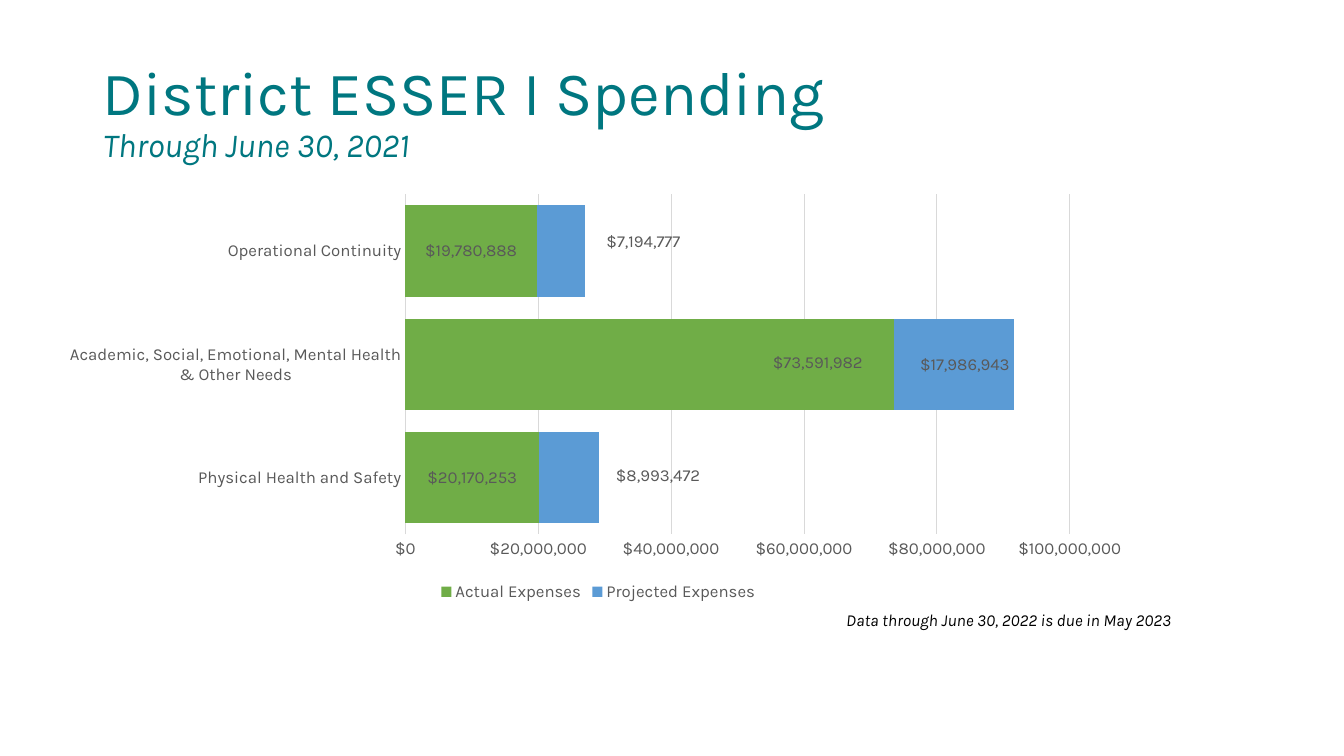
from lxml import etree
from pptx import Presentation
from pptx.chart.data import CategoryChartData
from pptx.dml.color import RGBColor
from pptx.enum.chart import XL_CHART_TYPE as ChartType
from pptx.enum.chart import XL_LABEL_POSITION as LabelPosition
from pptx.enum.chart import XL_LEGEND_POSITION as LegendPosition
from pptx.enum.chart import XL_TICK_MARK as TickMark
from pptx.enum.text import MSO_ANCHOR as Anchor
from pptx.enum.text import MSO_AUTO_SIZE as AutoSize
from pptx.enum.text import PP_ALIGN as Align
from pptx.oxml import parse_xml
from pptx.oxml.ns import nsdecls, qn
from pptx.util import Inches, Pt

TEAL = RGBColor(0x00, 0x77, 0x80)
BLACK = RGBColor(0x00, 0x00, 0x00)
GRAY = RGBColor(0x59, 0x59, 0x59)
GRID = RGBColor(0xD9, 0xD9, 0xD9)
GREEN = RGBColor(0x70, 0xAD, 0x47)
BLUE = RGBColor(0x5B, 0x9B, 0xD5)

FONT = "Karla"
DOLLARS = '"$"#,##0'
PLOT_AREA = {"x": 0.322, "y": 0.042, "w": 0.613, "h": 0.792}
NO_LEADER_LINES = (
    f"<c:extLst {nsdecls('c')}>"
    '<c:ext uri="{CE6537A1-D6FC-4f65-9D91-7224C49458BB}"'
    ' xmlns:c15="http://schemas.microsoft.com/office/drawing/2012/chart">'
    '<c15:showLeaderLines val="0"/></c:ext></c:extLst>'
)

CATEGORIES = [
    "Physical Health and Safety",
    "Academic, Social, Emotional, Mental Health & Other Needs",
    "Operational Continuity",
]
# Name, amounts, colour, label position, label shifts by category index
EXPENSES = [
    ("Actual Expenses", (20170253, 73591982, 19780888), GREEN,
     LabelPosition.CENTER, {1: (0.155, -0.005)}),
    ("Projected Expenses", (8993472, 17986943, 7194777), BLUE,
     LabelPosition.INSIDE_END, {0: (0.097, -0.005), 2: (0.092, -0.021)}),
]


def style_font(font, size, color):
    font.name = FONT
    font.size = Pt(size)
    font.color.rgb = color


def place(shape, left, top, width, height):
    shape.left, shape.top = Inches(left), Inches(top)
    shape.width, shape.height = Inches(width), Inches(height)


def add_heading(slide, box):
    title = slide.shapes.title
    place(title, *box)
    frame = title.text_frame
    frame.auto_size = AutoSize.NONE
    frame.vertical_anchor = Anchor.MIDDLE
    heading = frame.paragraphs[0]
    heading.alignment = Align.LEFT
    heading.line_spacing = 0.9
    name = heading.add_run()
    name.text = "District ESSER I Spending"
    heading.add_line_break()
    period = heading.add_run()
    period.text = "Through June 30, 2021"
    for run, size in ((name, 44), (period, 24)):
        style_font(run.font, size, TEAL)
    period.font.italic = True


def manual_layout(values, inner=False):
    """Return a c:layout element; inner marks the plot area without its labels."""
    layout = parse_xml(f"<c:layout {nsdecls('c')}><c:manualLayout/></c:layout>")
    settings = dict(values)
    if inner:
        settings = {"layoutTarget": "inner", "xMode": "edge", "yMode": "edge", **settings}
    for tag, value in settings.items():
        etree.SubElement(layout[0], qn(f"c:{tag}")).set("val", str(value))
    return layout


def shift_label(series, index, position, shift):
    """Move one value label by fractions of the chart's width and height."""
    label = series.points[index].data_label
    label.position = position
    style_font(label.font, 12, GRAY)
    number_format = parse_xml(f"<c:numFmt {nsdecls('c')} sourceLinked='0'/>")
    number_format.set("formatCode", DOLLARS)
    for label_index in series.data_labels._element.iterfind(f"{qn('c:dLbl')}/{qn('c:idx')}"):
        if label_index.get("val") == str(index):
            label_index.addnext(number_format)
            label_index.addnext(manual_layout(dict(zip("xy", shift))))


def hide_leader_lines(labels):
    element = labels._element
    for setting in element.findall(qn("c:showLeaderLines")):
        setting.set("val", "0")
    element.append(parse_xml(NO_LEADER_LINES))


def style_series(series, color, position, shifts):
    series.format.fill.solid()
    series.format.fill.fore_color.rgb = color
    labels = series.data_labels
    labels.show_value = True
    labels.number_format = DOLLARS
    labels.number_format_is_linked = False
    labels.position = position
    style_font(labels.font, 12, GRAY)
    for index, shift in shifts.items():
        shift_label(series, index, position, shift)
    hide_leader_lines(labels)


def style_axes(chart):
    for axis in (chart.category_axis, chart.value_axis):
        axis.major_tick_mark = axis.minor_tick_mark = TickMark.NONE
        style_font(axis.tick_labels.font, 12, GRAY)
    amounts = chart.value_axis
    amounts.minimum_scale, amounts.maximum_scale = 0, 100_000_000
    amounts.major_unit = 20_000_000
    amounts.tick_labels.number_format = DOLLARS
    amounts.tick_labels.number_format_is_linked = False
    amounts.format.line.fill.background()
    amounts.has_major_gridlines = True
    for line in (chart.category_axis.format.line, amounts.major_gridlines.format.line):
        line.color.rgb = GRID
        line.width = Pt(0.75)


def add_spending_chart(slide, box):
    data = CategoryChartData(number_format=DOLLARS)
    data.categories = CATEGORIES
    for name, amounts, *_ in EXPENSES:
        data.add_series(name, amounts)
    chart = slide.shapes.add_chart(
        ChartType.BAR_STACKED, *map(Inches, box), data).chart
    style_font(chart.font, 10, BLACK)
    chart.has_title = False
    chart.has_legend = True
    chart.legend.position = LegendPosition.BOTTOM
    chart.legend.include_in_layout = False
    style_font(chart.legend.font, 12, GRAY)
    style_axes(chart)

    bars = chart.plots[0]
    bars.gap_width, bars.overlap = 24, 100
    bars.vary_by_categories = False
    for series, (_, _, color, position, shifts) in zip(bars.series, EXPENSES):
        style_series(series, color, position, shifts)

    plot_area = chart._chartSpace.chart.plotArea
    for layout in plot_area.findall(qn("c:layout")):
        plot_area.remove(layout)
    plot_area.insert(0, manual_layout(PLOT_AREA, inner=True))


def add_data_note(slide, box):
    frame = slide.shapes.add_textbox(*map(Inches, box)).text_frame
    frame.word_wrap = True
    frame.auto_size = AutoSize.SHAPE_TO_FIT_TEXT
    note = frame.paragraphs[0]
    note.text = "Data through June 30, 2022 is due in May 2023"
    note.alignment = Align.CENTER
    style_font(note.font, 12, BLACK)
    note.font.italic = True


def main():
    deck = Presentation()
    deck.slide_width, deck.slide_height = Inches(13.33), Inches(7.5)
    slide = deck.slides.add_slide(deck.slide_layouts[5])
    add_heading(slide, (0.92, 0.4, 11.5, 1.45))
    add_spending_chart(slide, (0.56, 1.75, 10.75, 4.26))
    add_data_note(slide, (8.15, 6, 3.71, 0.3))
    deck.save("out.pptx")


if __name__ == "__main__":
    main()
